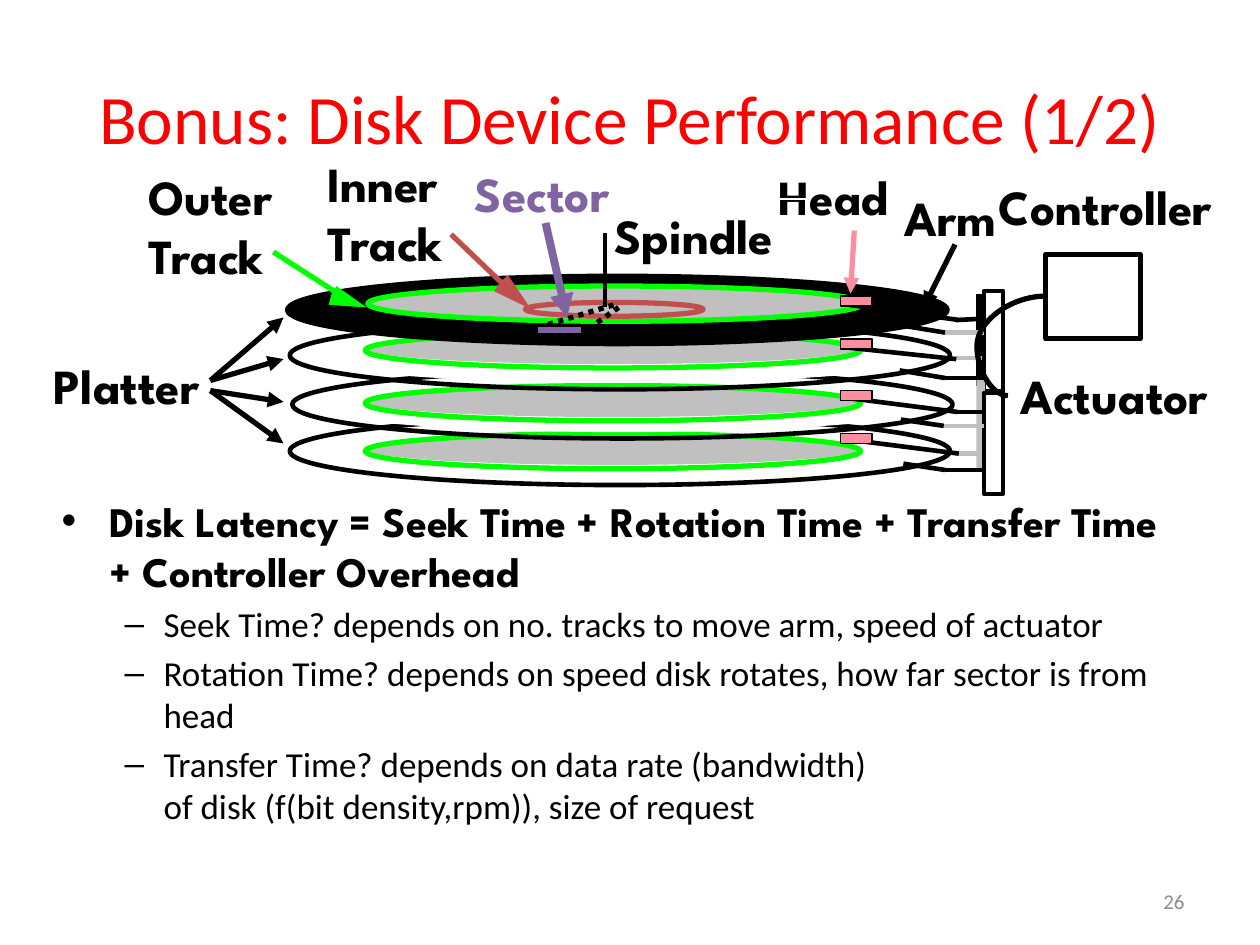
from dataclasses import dataclass

from lxml import etree
from pptx import Presentation
from pptx.dml.color import RGBColor
from pptx.enum.dml import MSO_LINE
from pptx.enum.shapes import MSO_CONNECTOR, MSO_SHAPE
from pptx.enum.text import MSO_ANCHOR, MSO_AUTO_SIZE, PP_ALIGN
from pptx.oxml.ns import qn
from pptx.util import Pt

PX = 9144
ELLIPSE, RECT = MSO_SHAPE.OVAL, MSO_SHAPE.RECTANGLE
STRAIGHT, CURVE = MSO_CONNECTOR.STRAIGHT, MSO_CONNECTOR.CURVE
DOTTED = MSO_LINE.ROUND_DOT
MIDDLE, GROW = MSO_ANCHOR.MIDDLE, MSO_AUTO_SIZE.SHAPE_TO_FIT_TEXT
LEFT, CENTER, RIGHT = PP_ALIGN.LEFT, PP_ALIGN.CENTER, PP_ALIGN.RIGHT


@dataclass(frozen=True)
class Theme:
    """Colours, fonts, type sizes and line widths of the deck."""
    ink: str = "000000"
    paper: str = "FFFFFF"
    title: str = "FF0000"
    number: str = "8C8C8C"
    disc: str = "C0C0C0"
    shade: str = "BFBFBF"
    outer: str = "00FF00"
    inner: str = "C0504D"
    sector: str = "8064A2"
    head: str = "FF8DA0"
    plain: str = "Calibri"
    strong: str = "League Spartan"
    title_size: float = 39.6
    label_size: float = 28
    lead_size: float = 24
    item_size: float = 20
    number_size: float = 12
    rim: float = 2.63
    stroke: float = 3


THEME = Theme()


def set_font(para, name, size, color, bold=False, align=LEFT):
    """Format a whole paragraph."""
    para.alignment = align
    para.font.name, para.font.size, para.font.bold = name, Pt(size), bold
    para.font.color.rgb = RGBColor.from_string(color)


def set_line(line, color, width):
    """Colour a line, or hide it when there is no colour."""
    if color is None:
        line.fill.background()
    else:
        line.color.rgb = RGBColor.from_string(color)
        line.width = Pt(width)


@dataclass
class Region:
    """A drawing area whose parts are placed from its top left corner."""
    shapes: object
    left: int
    top: int

    def at(self, x, y):
        """Turn region px into slide EMU."""
        return (self.left + x) * PX, (self.top + y) * PX

    def style(self, shape, fill, line, width):
        """Give a shape its fill and outline."""
        shape.shadow.inherit = False
        if fill is None:
            shape.fill.background()
        else:
            shape.fill.solid()
            shape.fill.fore_color.rgb = RGBColor.from_string(fill)
        set_line(shape.line, line, width)
        return shape

    def shape(self, kind, box, fill=None, line=None, width=THEME.rim):
        """Add a preset shape."""
        x, y, wide, high = box
        shape = self.shapes.add_shape(kind, *self.at(x, y), wide * PX, high * PX)
        return self.style(shape, fill, line, width)

    def wedge(self, points, color, line=None):
        """Add a filled polygon."""
        start, *rest = [self.at(*point) for point in points]
        builder = self.shapes.build_freeform(*start)
        builder.add_line_segments(rest)
        return self.style(builder.convert_to_shape(), color, line, 0.75)

    def line(self, ends, color=THEME.ink, width=THEME.rim, arrow=False, dash=None, kind=STRAIGHT):
        """Add a connector, with an arrowhead at its end if asked."""
        x1, y1, x2, y2 = ends
        connector = self.shapes.add_connector(kind, *self.at(x1, y1), *self.at(x2, y2))
        set_line(connector.line, color, width)
        if dash is not None:
            connector.line.dash_style = dash
        properties = connector.element.spPr
        if arrow:
            etree.SubElement(properties.find(qn("a:ln")), qn("a:tailEnd"), type="triangle")
        etree.SubElement(properties, qn("a:effectLst"))
        return connector

    def text(self, box, wrap=True):
        """Add a text box and return it."""
        x, y, wide, high = box
        holder = self.shapes.add_textbox(*self.at(x, y), wide * PX, high * PX)
        holder.text_frame.word_wrap = wrap
        return holder

    def label(self, text, box, color=THEME.ink):
        """Add a bold label that does not wrap."""
        holder = self.text(box, wrap=False)
        holder.text_frame.text = text
        holder.text_frame.auto_size = GROW
        for para in holder.text_frame.paragraphs:
            set_font(para, THEME.strong, THEME.label_size, color, bold=True)
        return holder


def add_title(page, box, text):
    """Place and format the title."""
    title = page.shapes.title
    title.left, title.top, title.width, title.height = (side * PX for side in box)
    title.text_frame.text = text
    title.text_frame.vertical_anchor = MIDDLE
    set_font(title.text_frame.paragraphs[0], THEME.plain, THEME.title_size, THEME.title, align=CENTER)


def add_platters(region):
    """Draw the stack of platters from the bottom up."""
    for rim_x, rim_y, ring_y in ((2, 112, 125), (4, 75, 87), (2, 36, 45)):
        region.shape(ELLIPSE, (rim_x + 4, rim_y + 3, 516, 46), THEME.paper)
        region.shape(ELLIPSE, (rim_x, rim_y, 524, 54), None, THEME.ink)
        region.shape(ELLIPSE, (64, ring_y + 1, 389, 24), THEME.disc)
        region.shape(ELLIPSE, (62, ring_y, 393, 28), None, THEME.outer, THEME.stroke)
    region.shape(ELLIPSE, (0, 0, 524, 54), THEME.ink, THEME.ink)
    region.shape(ELLIPSE, (64, 8, 393, 28), THEME.disc, THEME.outer, THEME.stroke)
    region.shape(ELLIPSE, (189, 21, 141, 11), THEME.disc, THEME.inner, THEME.stroke)
    for ends in ((263, 25, 225, 52), (259, 23, 172, 49)):
        region.line(ends, width=THEME.stroke, dash=DOTTED)


def add_actuator(region):
    """Draw the actuator columns and the two sets of arms."""
    for bar_y, column_y, fill, line in ((3, 0, THEME.ink, THEME.ink), (69, 81, THEME.shade, None)):
        region.shape(RECT, (101, bar_y, 7, 72), fill, line, 0.75)
        region.shape(RECT, (107, column_y, 15, 80), None, THEME.ink)
    upper = ((105, 22, 85, 23), (87, 23, 0, 11), (76, 33, 40, 27),
             (85, 54, 0, 45), (76, 69, 40, 63), (76, 69, 107, 69))
    lower = ((105, 96, 85, 96), (86, 96, 0, 85), (75, 107, 41, 102),
             (87, 129, 0, 118), (76, 142, 43, 137), (76, 142, 107, 142))
    for ends in ((107, 33, 76, 33), (105, 53, 85, 53), (74, 107, 107, 107), (87, 129, 105, 129)):
        region.line(ends, THEME.shade)
    for arms in (upper, lower):
        group = Region(region.shapes.add_group_shape().shapes, region.left, region.top)
        for ends in arms:
            group.line(ends)


def add_callouts(region):
    """Draw the labels, pointers, heads and controller."""
    region.wedge(((393, 114), (397, 108), (403, 102), (420, 127)), THEME.inner, THEME.inner)
    region.line((358, 69, 406, 115), THEME.inner, THEME.stroke)
    region.wedge(((261, 125), (263, 117), (267, 110), (291, 127)), THEME.outer)
    region.line((217, 83, 276, 121), THEME.outer, THEME.stroke)
    region.line((433, 60, 450, 135), THEME.sector, 4.5, arrow=True)
    region.line((678, 66, 675, 116), THEME.head, THEME.stroke, arrow=True)
    for text, box in (("Platter", (33, 160, 139, 57)), ("Arm", (708, 27, 93, 57)),
                      ("Actuator", (800, 168, 172, 57)), ("Head", (608, 10, 115, 57)),
                      ("Inner\nTrack", (250, 0, 116, 104)), ("Outer\nTrack", (108, 10, 123, 104)),
                      ("Controller", (783, 18, 208, 57))):
        region.label(text, box)
    region.label("Sector", (367, 8, 132, 57), THEME.sector)
    region.line((427, 145, 461, 145), THEME.sector, THEME.stroke)
    for head_y in (118, 152, 193, 227):
        region.shape(RECT, (667, head_y, 25, 8), THEME.head, THEME.ink, 1)
    for ends in ((758, 77, 733, 127), (167, 185, 225, 135), (167, 185, 225, 168),
                 (167, 193, 225, 202), (167, 193, 225, 235)):
        region.line(ends, width=THEME.stroke, arrow=True)
    region.shape(RECT, (830, 85, 75, 67), None, THEME.ink, THEME.stroke)
    cable = region.line((830, 118, 800, 197), width=THEME.stroke, kind=CURVE)
    bends = cable.element.xpath(".//a:avLst")[0]
    etree.SubElement(bends, qn("a:gd"), name="adj1", fmla="val 182100")
    spindle = region.label("Spindle", (478, 41, 162, 57))
    set_line(spindle.line, THEME.paper, 1)
    region.line((480, 127, 480, 68), width=2.25)


def add_bullets(region, wide, high, lead, items):
    """Write the lead bullet and its dashed items."""
    frame = region.text((0, 0, wide, high)).text_frame
    rows = [(lead, "•", 38, 38, THEME.strong, THEME.lead_size, True)]
    rows += [(item, "–", 81, 31, THEME.plain, THEME.item_size, False) for item in items]
    for index, (text, mark, margin, hang, font, size, bold) in enumerate(rows):
        para = frame.add_paragraph() if index else frame.paragraphs[0]
        para.text = text
        para.space_before = Pt(size / 5 if index else 0)
        properties = para._p.get_or_add_pPr()
        properties.set("marL", str(margin * PX))
        properties.set("indent", str(-hang * PX))
        etree.SubElement(properties, qn("a:buFont"), typeface="Arial")
        etree.SubElement(properties, qn("a:buChar"), char=mark)
        set_font(para, font, size, THEME.ink, bold)


def add_number(region, wide, high, text):
    """Write the page number."""
    frame = region.text((0, 0, wide, high)).text_frame
    frame.text = text
    frame.vertical_anchor = MIDDLE
    set_font(frame.paragraphs[0], THEME.plain, THEME.number_size, THEME.number, align=RIGHT)


def main():
    """Build the deck."""
    deck = Presentation()
    deck.slide_width, deck.slide_height = 1000 * PX, 750 * PX
    page = deck.slides.add_slide(deck.slide_layouts[5])
    add_title(page, (50, 30, 900, 125), "Bonus: Disk Device Performance (1/2)")
    add_bullets(Region(page.shapes, 39, 388), 900, 307,
                "Disk Latency = Seek Time + Rotation Time + Transfer Time + Controller Overhead",
                ("Seek Time? depends on no. tracks to move arm, speed of actuator",
                 "Rotation Time? depends on speed disk rotates, how far sector is from head",
                 "Transfer Time? depends on data rate (bandwidth) \vof disk (f(bit density,rpm)), size of request"))
    add_platters(Region(page.shapes, 228, 219))
    add_actuator(Region(page.shapes, 674, 231))
    add_callouts(Region(page.shapes, 0, 117))
    add_number(Region(page.shapes, 717, 695), 233, 40, "26")
    deck.save("out.pptx")


if __name__ == "__main__":
    main()
